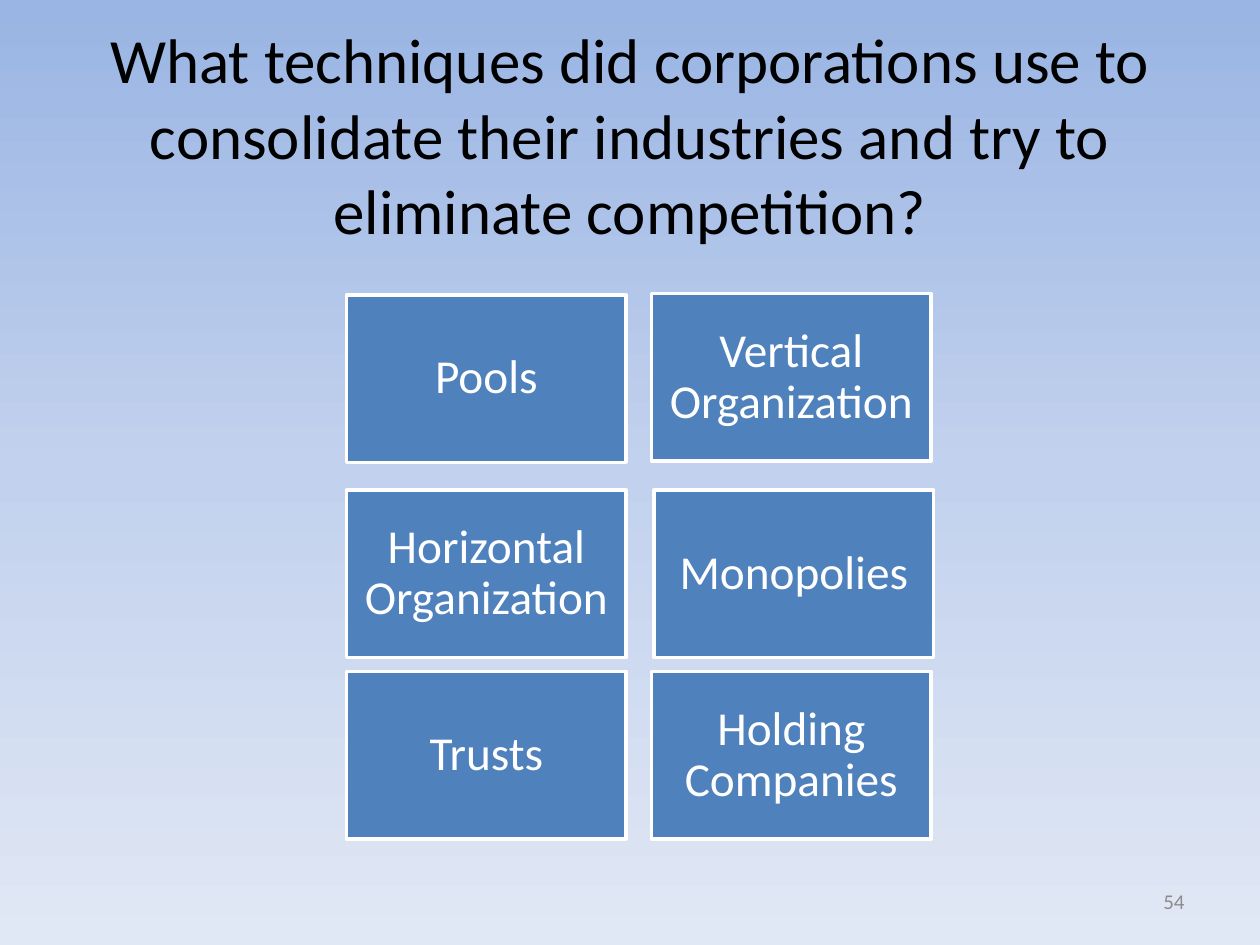
"""Build a slide that shows six consolidation techniques in a grid of boxes."""
from copy import deepcopy
from dataclasses import dataclass

from pptx import Presentation
from pptx.dml.color import RGBColor
from pptx.enum import shapes, text
from pptx.util import Inches, Pt


@dataclass(frozen=True)
class Theme:
    font: str = "Calibri"
    title_color: str = "000000"
    box_fill: str = "4F81BD"
    box_text: str = "FFFFFF"
    number_color: str = "8C8C8C"
    sky: tuple = ((0, "9AB5E4"), (0.5, "C2D1ED"), (1, "E1E8F5"))
    title_size: int = 36
    box_size: int = 27
    number_size: int = 12
    box_line: int = 2


def write(frame, wording, size, color, align):
    frame.word_wrap = True
    frame.vertical_anchor = text.MSO_ANCHOR.MIDDLE
    para = frame.paragraphs[0]
    para.alignment = align
    span = para.add_run()
    span.text = wording
    span.font.name = theme.font
    span.font.size = Pt(size)
    span.font.color.rgb = RGBColor.from_string(color)
    return para


theme = Theme()
deck = Presentation()
deck.slide_width, deck.slide_height = Inches(10), Inches(7.5)
page = deck.slides.add_slide(deck.slide_layouts.get_by_name("Title Only"))

sky = page.background.fill
sky.gradient()
sky.gradient_angle = 270
stop_list = page.element.xpath(".//a:gsLst")[0]
stop_list.insert(1, deepcopy(stop_list[0]))
for stop, (position, color) in zip(sky.gradient_stops, theme.sky):
    stop.position = position
    stop.color.rgb = RGBColor.from_string(color)

title = page.shapes.title
title.left, title.top = Inches(0.5), Inches(0.3)
title.width, title.height = Inches(9), Inches(1.53)
write(
    title.text_frame,
    "What techniques did corporations use to consolidate their industries and try to eliminate competition?",
    theme.title_size, theme.title_color, text.PP_ALIGN.CENTER,
)

number = page.shapes.add_textbox(Inches(7.17), Inches(6.95), Inches(2.33), Inches(0.4))
write(number.text_frame, "54", theme.number_size, theme.number_color, text.PP_ALIGN.RIGHT)

techniques = (
    ("Pools", 2.75, 2.34),
    ("Vertical Organization", 5.17, 2.33),
    ("Horizontal Organization", 2.75, 3.89),
    ("Monopolies", 5.19, 3.89),
    ("Trusts", 2.75, 5.33),
    ("Holding Companies", 5.17, 5.33),
)
for technique, left, top in techniques:
    box = page.shapes.add_shape(
        shapes.MSO_SHAPE.RECTANGLE, Inches(left), Inches(top), Inches(2.22), Inches(1.33)
    )
    box.shadow.inherit = False
    box.fill.solid()
    box.fill.fore_color.rgb = RGBColor.from_string(theme.box_fill)
    box.line.color.rgb = RGBColor.from_string(theme.box_text)
    box.line.width = Pt(theme.box_line)
    frame = box.text_frame
    frame.margin_left = frame.margin_right = Inches(0.11)
    frame.margin_top = frame.margin_bottom = Inches(0.11)
    para = write(frame, technique, theme.box_size, theme.box_text, text.PP_ALIGN.CENTER)
    para.line_spacing = 0.9

deck.save("out.pptx")
